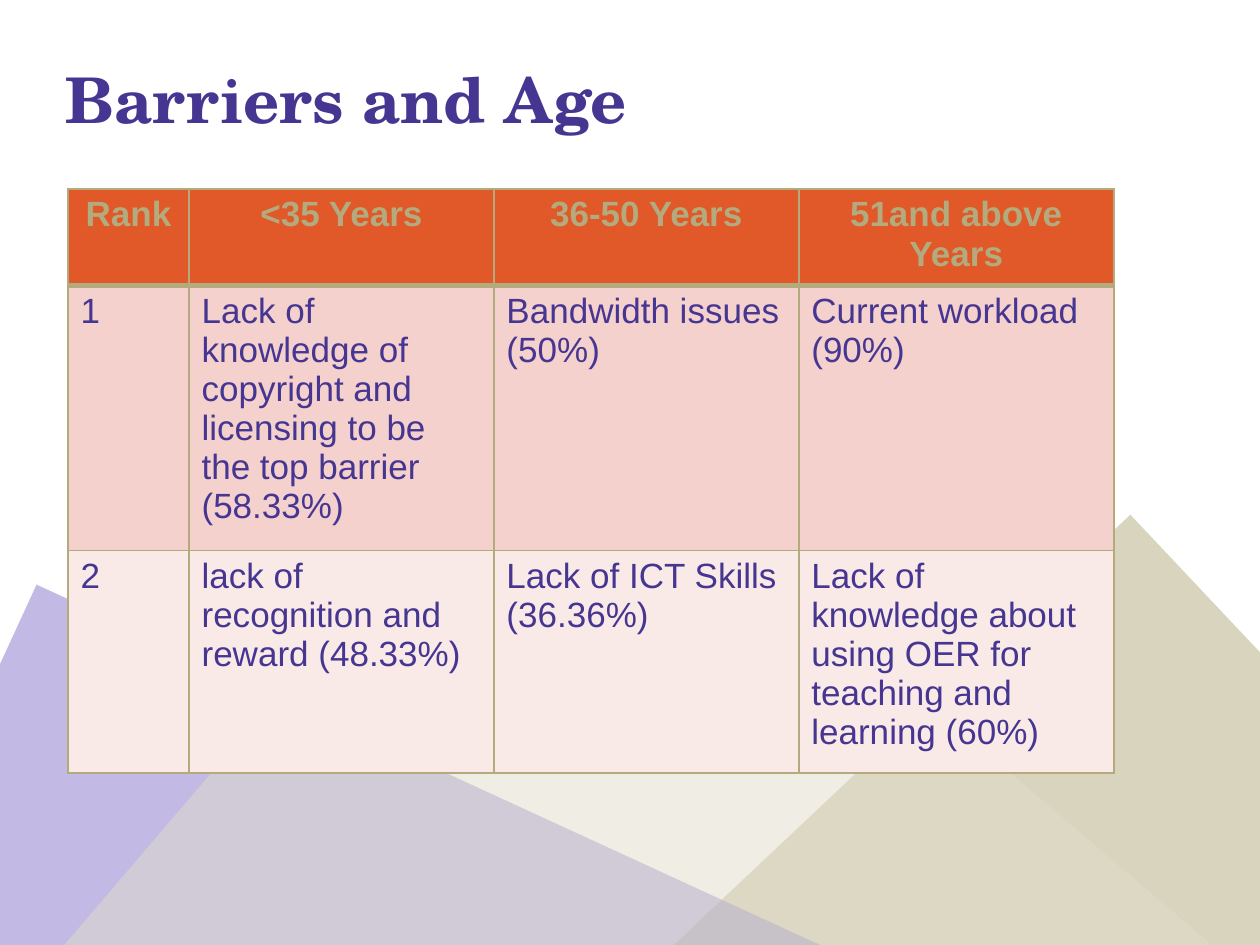
"""Build the "Barriers and Age" slide with its ranking table."""
from dataclasses import dataclass

from lxml.etree import SubElement
from pptx import Presentation
from pptx.dml.color import RGBColor
from pptx.enum.shapes import MSO_SHAPE
from pptx.enum.text import MSO_ANCHOR, PP_ALIGN
from pptx.oxml.ns import qn
from pptx.util import Inches, Pt

INDIGO, SAND, ORANGE = "463691", "B3AA7E", "E15829"
COLUMN_WIDTHS = (0.96, 2.42, 2.42, 2.5)


@dataclass(frozen=True)
class Panel:
    left: float
    top: float
    rotation: float
    color: str


@dataclass(frozen=True)
class RowStyle:
    height: float
    fill: str
    font: dict
    alignment: PP_ALIGN
    top_border: float
    bottom_border: float


HEADER_FONT = {"name": "Arial", "size": Pt(20), "bold": True, "color": SAND}
BODY_FONT = HEADER_FONT | {"bold": False, "color": INDIGO}
TITLE_FONT = {"name": "TeX Gyre Schola", "size": Pt(36), "bold": True, "color": INDIGO}

PANELS = (
    Panel(4.92, 5.79, 46.7, SAND),
    Panel(-1.68, 5.96, 24.7, "8677CC"),
    Panel(0.9, 4.68, 40.5, "E1DDCB"),
)
ROW_STYLES = (
    RowStyle(0.72, ORANGE, HEADER_FONT, PP_ALIGN.CENTER, 1, 3),
    RowStyle(1.95, "F4D1CD", BODY_FONT, PP_ALIGN.LEFT, 3, 1),
    RowStyle(1.65, "F9EAE8", BODY_FONT, PP_ALIGN.LEFT, 1, 1),
)
BARRIERS = (
    ("Rank", "<35 Years", "36-50 Years", "51and above Years"),
    (
        "1",
        "Lack of knowledge of copyright and licensing to be the top barrier (58.33%)",
        "Bandwidth issues (50%)",
        "Current workload (90%)",
    ),
    (
        "2",
        "lack of recognition and reward (48.33%)",
        "Lack of ICT Skills (36.36%)",
        "Lack of knowledge about using OER for teaching and learning (60%)",
    ),
)


def rgb(color: str) -> RGBColor:
    return RGBColor.from_string(color)


def write_text(text_frame, text: str, font: dict, alignment=PP_ALIGN.LEFT) -> None:
    paragraph = text_frame.paragraphs[0]
    paragraph.alignment = alignment
    run = paragraph.add_run()
    run.text = text
    for name, value in font.items():
        if name == "color":
            run.font.color.rgb = rgb(value)
        else:
            setattr(run.font, name, value)


def draw_panel(slide, panel: Panel) -> None:
    shape = slide.shapes.add_shape(
        MSO_SHAPE.RECTANGLE, Inches(panel.left), Inches(panel.top), Inches(8), Inches(7.68)
    )
    shape.shadow.inherit = False
    shape.rotation = panel.rotation
    shape.line.fill.background()
    shape.fill.solid()
    shape.fill.fore_color.rgb = rgb(panel.color)
    color_element = shape.fill._xPr.find(qn("a:solidFill"))[0]
    SubElement(color_element, qn("a:alpha"), val="50000")


def draw_title(slide) -> None:
    box = slide.shapes.add_textbox(Inches(0.42), Inches(-0.25), Inches(9.25), Inches(1.38))
    box.text_frame.word_wrap = True
    box.text_frame.vertical_anchor = MSO_ANCHOR.BOTTOM
    write_text(box.text_frame, "Barriers and Age", TITLE_FONT)


def style_cell(cell, text: str, style: RowStyle) -> None:
    borders = {"L": 1, "R": 1, "T": style.top_border, "B": style.bottom_border}
    properties = cell._tc.get_or_add_tcPr()
    for side, width in borders.items():
        line = SubElement(properties, qn(f"a:ln{side}"), w=str(Pt(width)))
        SubElement(SubElement(line, qn("a:solidFill")), qn("a:srgbClr"), val=SAND)
    cell.fill.solid()
    cell.fill.fore_color.rgb = rgb(style.fill)
    write_text(cell.text_frame, text, style.font, style.alignment)


def draw_table(slide) -> None:
    table = slide.shapes.add_table(
        len(BARRIERS),
        len(COLUMN_WIDTHS),
        Inches(0.54),
        Inches(1.5),
        Inches(sum(COLUMN_WIDTHS)),
        Inches(sum(style.height for style in ROW_STYLES)),
    ).table
    for column, width in zip(table.columns, COLUMN_WIDTHS):
        column.width = Inches(width)
    for row, texts, style in zip(table.rows, BARRIERS, ROW_STYLES):
        row.height = Inches(style.height)
        for cell, text in zip(row.cells, texts):
            style_cell(cell, text, style)


def main() -> None:
    presentation = Presentation()
    presentation.slide_width, presentation.slide_height = Inches(10), Inches(7.5)
    slide = presentation.slides.add_slide(presentation.slide_layouts[6])
    for panel in PANELS:
        draw_panel(slide, panel)
    draw_title(slide)
    draw_table(slide)
    presentation.save("out.pptx")


if __name__ == "__main__":
    main()
